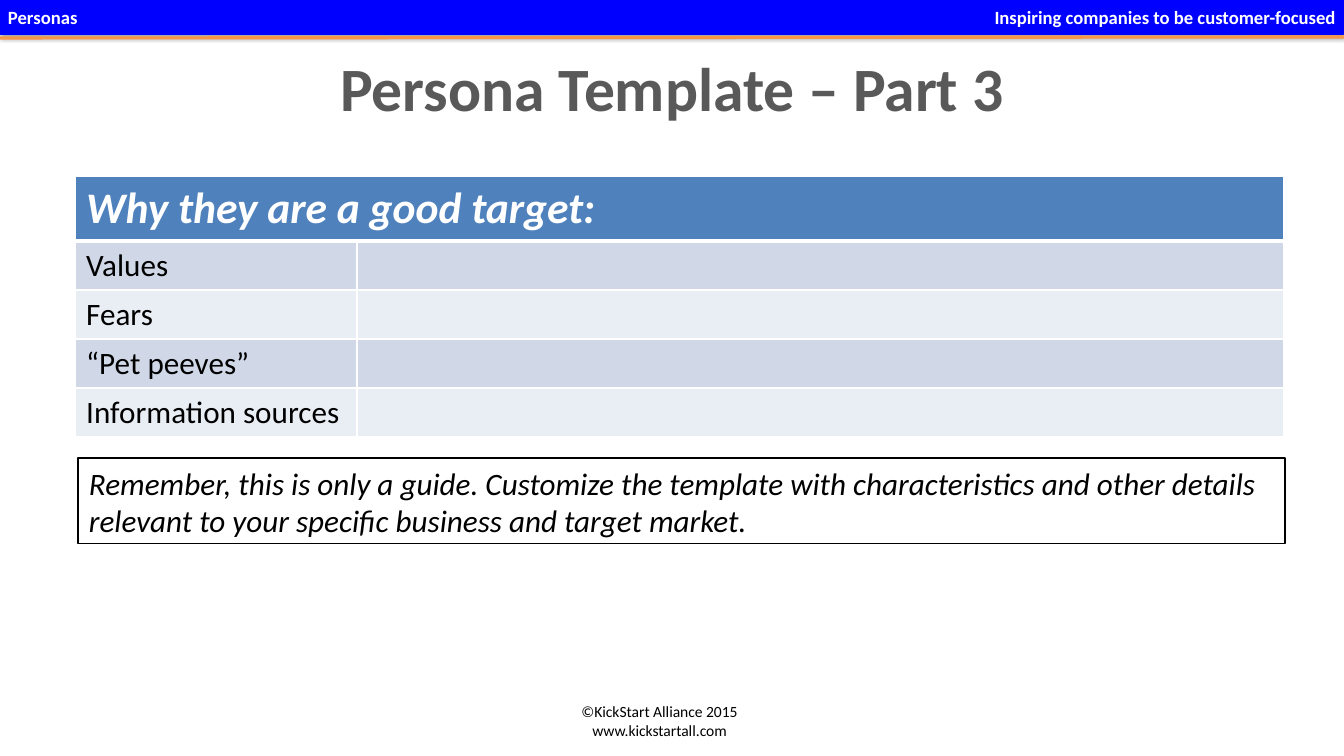
from lxml.etree import SubElement
from pptx import Presentation
from pptx.dml.color import RGBColor
from pptx.enum.shapes import MSO_CONNECTOR, MSO_SHAPE
from pptx.enum.text import MSO_ANCHOR, PP_ALIGN
from pptx.oxml.ns import qn
from pptx.util import Pt

SCALE = 914400 / 112


def px(length):
    return round(length * SCALE)


def color(value):
    return RGBColor.from_string(value)


def write(frame, text, size, ink="000000", bold=False, italic=False,
          align=PP_ALIGN.LEFT, anchor=MSO_ANCHOR.TOP, insets=(11, 6)):
    frame.word_wrap = True
    frame.vertical_anchor = anchor
    frame.margin_left = frame.margin_right = px(insets[0])
    frame.margin_top = frame.margin_bottom = px(insets[1])
    for index, line in enumerate(text.split("\n")):
        paragraph = frame.paragraphs[0] if index == 0 else frame.add_paragraph()
        paragraph.alignment = align
        run = paragraph.add_run()
        run.text = line
        font = run.font
        font.name, font.size = "Calibri", Pt(size)
        font.bold, font.italic = bold, italic
        font.color.rgb = color(ink)


def add_text(slide, box, text, size, **style):
    shape = slide.shapes.add_textbox(*map(px, box))
    write(shape.text_frame, text, size, **style)


def add_rectangle(slide, box, line, fill=None):
    shape = slide.shapes.add_shape(MSO_SHAPE.RECTANGLE, *map(px, box))
    shape.shadow.inherit = False
    if fill:
        shape.fill.solid()
        shape.fill.fore_color.rgb = color(fill)
    else:
        shape.fill.background()
    shape.line.color.rgb = color(line)
    shape.line.width = Pt(0.75)
    return shape


def add_shadow(shape):
    effects = shape._element.spPr.find(qn("a:effectLst"))
    shadow = SubElement(effects, qn("a:outerShdw"), blurRad=str(Pt(3.1)),
                        dist=str(Pt(1.8)), dir="5400000", rotWithShape="0")
    ink = SubElement(shadow, qn("a:srgbClr"), val="000000")
    SubElement(ink, qn("a:alpha"), val="35000")


def add_header(slide, box, left_text, right_text):
    left, top, width, height = box
    add_shadow(add_rectangle(slide, box, "0000FF", "0000FF"))
    style = dict(ink="FFFFFF", bold=True, insets=(8, 4))
    add_text(slide, (left, top + 2, 326, 31), left_text, 12, **style)
    add_text(slide, (left + width - 436, top + 2, 436, 31), right_text, 12,
             align=PP_ALIGN.RIGHT, **style)
    rule = slide.shapes.add_connector(
        MSO_CONNECTOR.STRAIGHT, px(left), px(top + height + 4),
        px(left + width), px(top + height + 3))
    rule.line.color.rgb = color("F79646")
    rule.line.width = Pt(2)
    SubElement(rule._element.spPr, qn("a:effectLst"))


def style_cell(cell, fill, bottom=1):
    properties = cell._tc.get_or_add_tcPr()
    for side, width in (("L", 1), ("R", 1), ("T", 1), ("B", bottom)):
        border = SubElement(properties, qn(f"a:ln{side}"), w=str(Pt(width)))
        solid = SubElement(border, qn("a:solidFill"))
        SubElement(solid, qn("a:srgbClr"), val="FFFFFF")
    cell.fill.solid()
    cell.fill.fore_color.rgb = color(fill)


def add_persona_table(slide, box, heading, labels):
    left, top, width, height = box
    header_height, label_width = 65, 282
    row_height = (height - header_height) // len(labels)
    table = slide.shapes.add_table(len(labels) + 1, 2, *map(px, box)).table
    table.columns[0].width = px(label_width)
    table.columns[1].width = px(width - label_width)
    table.rows[0].height = px(header_height)
    for cell in table.rows[0].cells:
        style_cell(cell, "4F81BD", bottom=3)
    title = table.cell(0, 0)
    title.merge(table.cell(0, 1))
    write(title.text_frame, heading, 28, ink="FFFFFF", bold=True, italic=True)
    for index, label in enumerate(labels, 1):
        table.rows[index].height = px(row_height)
        for cell in table.rows[index].cells:
            style_cell(cell, "D0D8E8" if index % 2 else "E9EDF4")
        write(table.cell(index, 0).text_frame, label, 20)


def add_note(slide, box, text):
    shape = add_rectangle(slide, box, "000000")
    write(shape.text_frame, text, 20, italic=True)


def main():
    presentation = Presentation()
    presentation.slide_width, presentation.slide_height = px(1344), px(756)
    slide = presentation.slides.add_slide(presentation.slide_layouts[6])
    add_header(slide, (0, 0, 1344, 34), "Personas",
               "Inspiring companies to be customer-focused")
    add_text(slide, (473, 696, 373, 49),
             "©KickStart Alliance 2015\nwww.kickstartall.com", 10,
             align=PP_ALIGN.CENTER)
    add_text(slide, (0, 45, 1344, 84), "Persona Template – Part 3", 39.6,
             ink="595959", bold=True, align=PP_ALIGN.CENTER,
             anchor=MSO_ANCHOR.MIDDLE, insets=(8, 4))
    add_persona_table(slide, (75, 176, 1209, 261), "Why they are a good target:",
                      ["Values", "Fears", "“Pet peeves”", "Information sources"])
    add_note(slide, (78, 458, 1207, 86),
             "Remember, this is only a guide. Customize the template with "
             "characteristics and other details\n"
             "relevant to your specific business and target market.")
    presentation.save("out.pptx")


if __name__ == "__main__":
    main()
